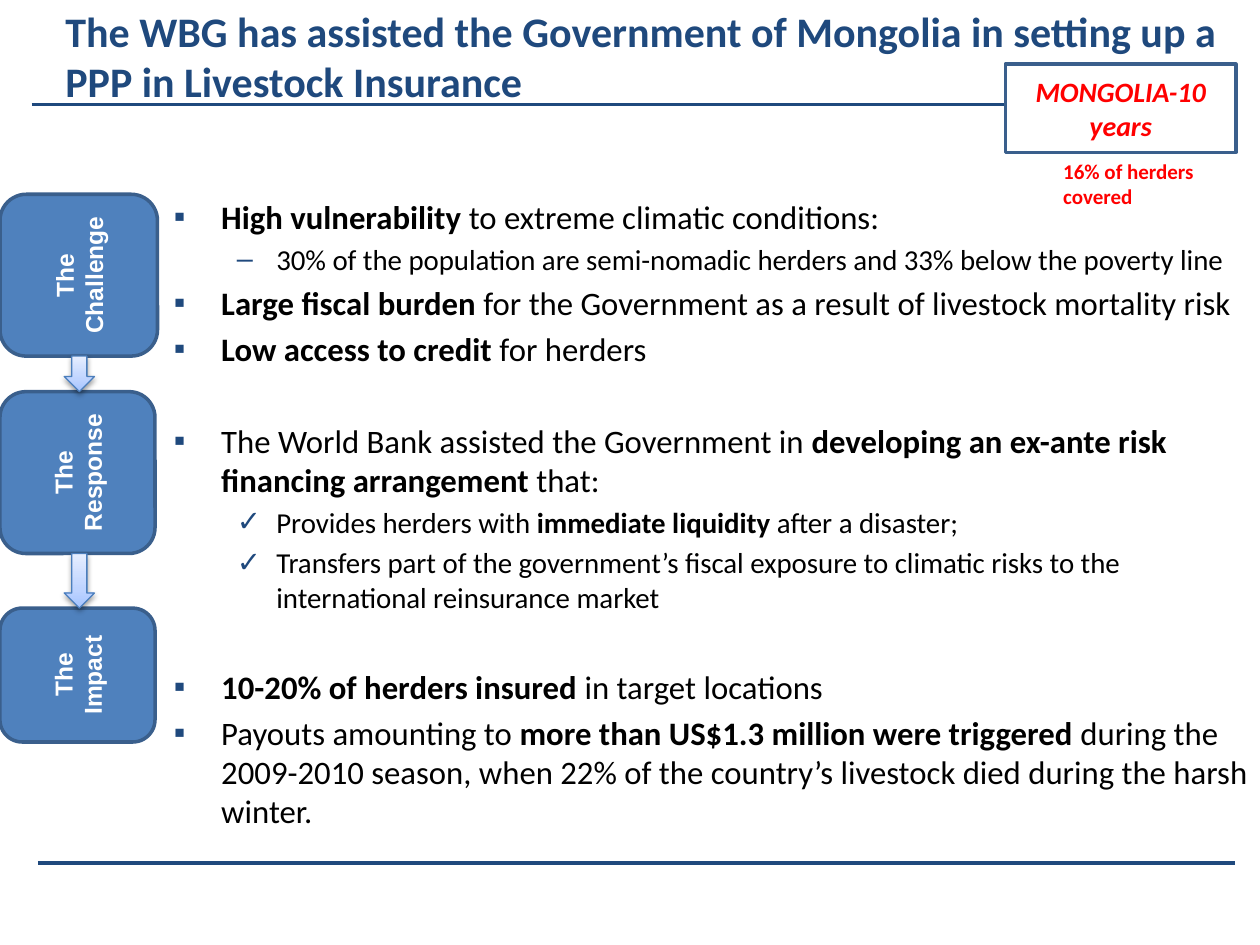
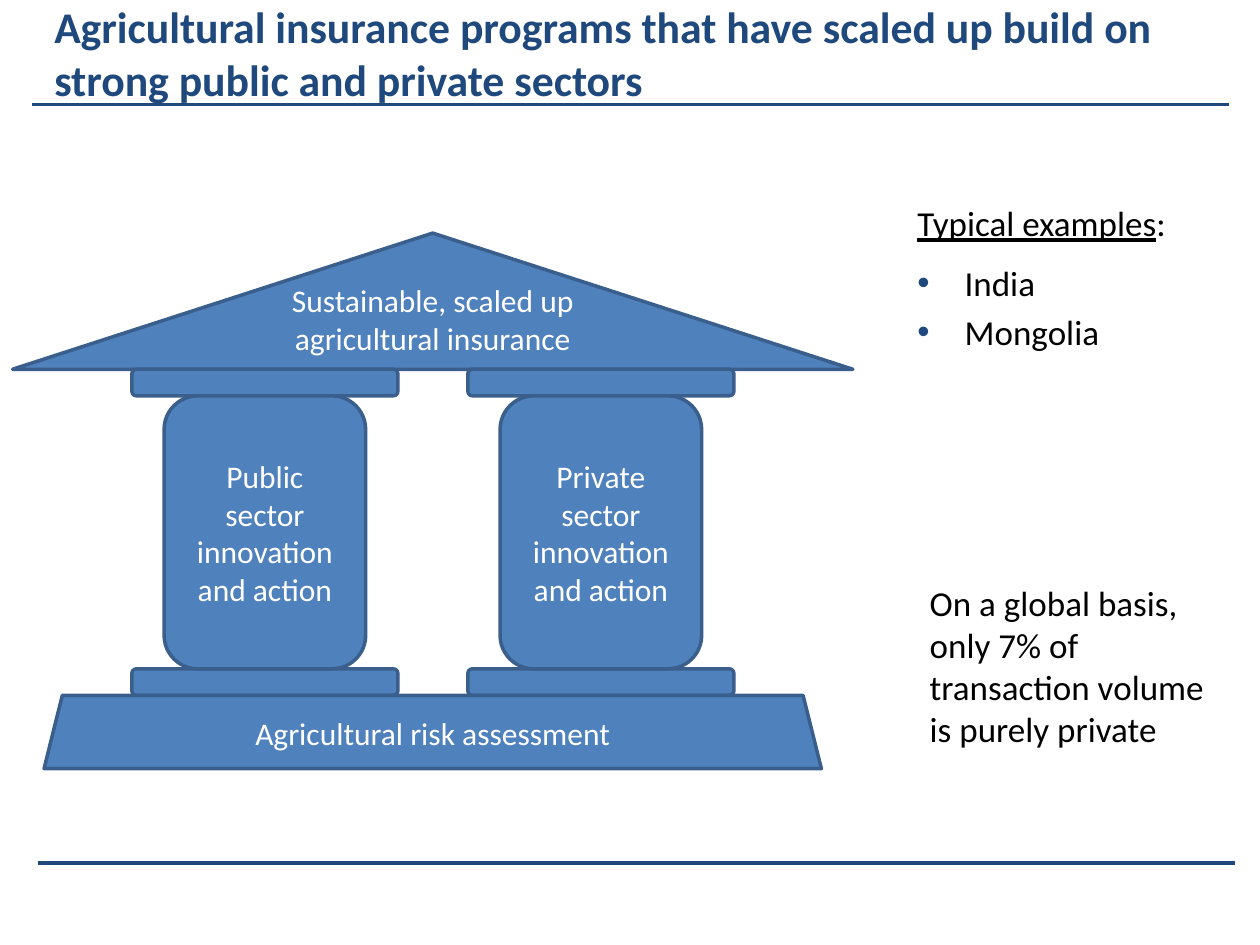
from copy import deepcopy
from dataclasses import dataclass
from typing import NamedTuple

from lxml import etree
from pptx import Presentation
from pptx.dml.color import RGBColor
from pptx.enum.shapes import MSO_CONNECTOR, MSO_SHAPE
from pptx.enum.text import MSO_ANCHOR, MSO_AUTO_SIZE, PP_ALIGN
from pptx.oxml.ns import qn
from pptx.util import Pt

NAVY = RGBColor(0x1F, 0x49, 0x7D)
BLUE = RGBColor(0x4F, 0x81, 0xBD)
OUTLINE = RGBColor(0x3A, 0x5F, 0x8C)
ARROW_LINE = RGBColor(0x4B, 0x7E, 0xBC)
ARROW_STOPS = (
    (0, RGBColor(0xA4, 0xC4, 0xFF)),
    (0.35, RGBColor(0xBF, 0xD4, 0xFF)),
    (1, RGBColor(0xE6, 0xEE, 0xFF)),
)
RED = RGBColor(0xFF, 0, 0)
WHITE = RGBColor(0xFF, 0xFF, 0xFF)
BLACK = RGBColor(0, 0, 0)

STRAIGHT = MSO_CONNECTOR.STRAIGHT
RECT, ROUND = MSO_SHAPE.RECTANGLE, MSO_SHAPE.ROUNDED_RECTANGLE
TRIANGLE, TRAPEZOID = MSO_SHAPE.ISOSCELES_TRIANGLE, MSO_SHAPE.TRAPEZOID
DOWN_ARROW = MSO_SHAPE.DOWN_ARROW
TOP, MIDDLE, BOTTOM = MSO_ANCHOR.TOP, MSO_ANCHOR.MIDDLE, MSO_ANCHOR.BOTTOM
LEFT, CENTER = PP_ALIGN.LEFT, PP_ALIGN.CENTER
NO_FIT = MSO_AUTO_SIZE.NONE

TITLE_AND_CONTENT = 1
SECTION_GAP = 30


class Box(NamedTuple):
    x: float
    y: float
    w: float
    h: float


class Run(NamedTuple):
    text: str
    bold: bool = False
    underline: bool = False


@dataclass(frozen=True)
class Font:
    size: float
    color: RGBColor = BLACK
    bold: bool = False
    italic: bool = False
    name: str = "Calibri"


@dataclass(frozen=True)
class Item:
    runs: tuple[Run, ...]
    size: float
    bullet: str = ""
    level: int = 0
    before: float | None = None  # default is a fifth of the text size
    after: float = 0


TAB_FONT = Font(14, WHITE, bold=True, name="Arial")
TEMPLE_FONT = Font(18, WHITE)


def style_run(r, font: Font) -> None:
    r.font.name, r.font.size = font.name, Pt(font.size)
    r.font.bold, r.font.italic = font.bold, font.italic
    r.font.color.rgb = font.color


def place(sp, box: Box) -> None:
    sp.left, sp.top, sp.width, sp.height = (Pt(v) for v in box)


def write(sp, text: str, font: Font, align=CENTER, anchor=MIDDLE) -> None:
    tf = sp.text_frame
    tf.text, tf.word_wrap, tf.auto_size = text, True, NO_FIT
    tf.vertical_anchor = anchor
    p = tf.paragraphs[0]
    p.alignment = align
    style_run(p.runs[0], font)


def add_box(slide, kind, box: Box, text: str = "", font: Font = TEMPLE_FONT,
            fill: RGBColor = BLUE, line: RGBColor = OUTLINE, weight: float = 2):
    sp = slide.shapes.add_shape(kind, *(Pt(v) for v in box))
    sp.shadow.inherit = False
    sp.fill.solid()
    sp.fill.fore_color.rgb = fill
    sp.line.color.rgb, sp.line.width = line, Pt(weight)
    if text:
        write(sp, text, font)
    return sp


def add_note(slide, box: Box, text: str, font: Font) -> None:
    sp = slide.shapes.add_textbox(*(Pt(v) for v in box))
    write(sp, text, font, LEFT, TOP)


def add_rule(slide, x: float, y: float) -> None:
    line = slide.shapes.add_connector(STRAIGHT, Pt(x), Pt(y), Pt(x + 684), Pt(y))
    line.line.color.rgb, line.line.width = NAVY, Pt(2)
    etree.SubElement(line._element.spPr, qn("a:effectLst"))


def add_arrow(slide, box: Box) -> None:
    sp = add_box(slide, DOWN_ARROW, box, line=ARROW_LINE, weight=0.75)
    # Three-stop gradient, darkest at the tip
    sp.fill.gradient()
    sp.fill.gradient_angle = 90
    spPr = sp._element.spPr
    stops = spPr.find(".//" + qn("a:gsLst"))
    stops.insert(1, deepcopy(stops[0]))
    for stop, (position, color) in zip(sp.fill.gradient_stops, ARROW_STOPS):
        stop.position, stop.color.rgb = position, color
    # Soft shadow below
    shadow = etree.SubElement(spPr.find(qn("a:effectLst")), qn("a:outerShdw"),
                              blurRad=str(Pt(3.1)), dist=str(Pt(1.6)), dir="5400000",
                              rotWithShape="0")
    black = etree.SubElement(shadow, qn("a:srgbClr"), val=str(BLACK))
    etree.SubElement(black, qn("a:alpha"), val="38000")


def set_bullet(p, item: Item) -> None:
    pPr = p._p.get_or_add_pPr()
    if not item.bullet:
        pPr.set("marL", "0")
        pPr.set("indent", "0")
        etree.SubElement(pPr, qn("a:buNone"))
        return
    margin, hanging = ((27, 27), (58.5, 22.5))[item.level]
    pPr.set("marL", str(Pt(margin)))
    pPr.set("indent", str(Pt(-hanging)))
    color = etree.SubElement(pPr, qn("a:buClr"))
    etree.SubElement(color, qn("a:srgbClr"), val=str(NAVY))
    etree.SubElement(pPr, qn("a:buFont"), typeface="Arial")
    etree.SubElement(pPr, qn("a:buChar"), char=item.bullet)


def fill_list(slide, box: Box, items: list[Item]) -> None:
    sp = slide.placeholders[1]
    place(sp, box)
    tf = sp.text_frame
    tf.auto_size = NO_FIT
    for i, item in enumerate(items):
        p = tf.add_paragraph() if i else tf.paragraphs[0]
        p.level = item.level
        set_bullet(p, item)
        before = item.size / 5 if item.before is None else item.before
        p.space_before = Pt(before if i else 0)
        p.space_after = Pt(item.after)
        for run in item.runs:
            r = p.add_run()
            r.text = run.text
            style_run(r, Font(item.size, bold=run.bold))
            r.font.underline = run.underline


def add_slide(prs, title: str, box: Box, size: float, anchor):
    slide = prs.slides.add_slide(prs.slide_layouts[TITLE_AND_CONTENT])
    add_rule(slide, 18, 59.8)
    add_rule(slide, 21.6, 493.2)
    place(slide.shapes.title, box)
    write(slide.shapes.title, title, Font(size, NAVY, bold=True), LEFT, anchor)
    return slide


def point(*runs: Run, before: float | None = None) -> Item:
    return Item(runs, 18.7, "▪", before=before)


def detail(bullet: str, *runs: Run) -> Item:
    return Item(runs, 16.5, bullet, level=1)


def build_mongolia(prs) -> None:
    slide = add_slide(
        prs, "The WBG has assisted the Government of Mongolia in setting up a "
        "PPP in Livestock Insurance", Box(30.2, -0.7, 689.8, 65.5), 24, TOP)

    # Stages down the left side, joined by arrows
    stages = (
        ("The Challenge", Box(0, 111, 90, 92.5)),
        ("The Response", Box(0, 223.8, 88.6, 92.5)),
        ("The Impact", Box(0, 347.5, 88.6, 76.5)),
    )
    for text, box in stages:
        sp = add_box(slide, ROUND, box, text, TAB_FONT)
        sp.text_frame._txBody.bodyPr.set("vert", "vert270")
    for (_, upper), (_, lower) in zip(stages, stages[1:]):
        bottom = upper.y + upper.h
        add_arrow(slide, Box(36.7, bottom, 17.3, lower.y - bottom))

    # Findings for each stage
    fill_list(slide, Box(92.2, 108.7, 633.6, 344.2), [
        point(Run("High vulnerability ", True), Run("to extreme climatic conditions:")),
        detail("–", Run("30% of the population are semi-nomadic herders and 33% below "
                        "the poverty line")),
        point(Run("Large fiscal burden ", True),
              Run("for the Government as a result of livestock mortality risk")),
        point(Run("Low access to credit ", True), Run("for herders")),
        point(Run("The World Bank assisted the Government in "),
              Run("developing an ex-ante risk financing arrangement", True),
              Run(" that:"), before=SECTION_GAP),
        detail("✓", Run("Provides herders with "), Run("immediate liquidity ", True),
               Run("after a disaster;")),
        detail("✓", Run("Transfers part of the government’s fiscal exposure to climatic "
                        "risks to the international reinsurance market")),
        point(Run("10-20% of herders insured ", True), Run("in target locations"),
              before=SECTION_GAP),
        point(Run("Payouts amounting to "),
              Run("more than US$1.3 million were triggered ", True),
              Run("during the 2009-2010 season, when 22% of the country’s livestock "
                  "died during the harsh winter.")),
    ])

    # Country tag
    add_box(slide, RECT, Box(574.5, 36.7, 131.8, 50.4), "MONGOLIA-10 years",
            Font(16, RED, bold=True, italic=True), fill=WHITE)
    add_note(slide, Box(600.5, 87.1, 108, 36), "16% of herders covered",
             Font(12, RED, bold=True))


def build_temple(prs) -> None:
    slide = add_slide(
        prs, "Agricultural insurance programs that have scaled up build on "
        "strong public and private sectors", Box(23.8, 0, 671.8, 59.8), 25, MIDDLE)

    # Roof
    roof = add_box(slide, TRIANGLE, Box(7.2, 133.2, 480.2, 77.8),
                   "Sustainable, scaled up agricultural insurance")
    roof.text_frame.vertical_anchor = BOTTOM
    roof.text_frame.margin_top, roof.text_frame.margin_bottom = Pt(0), Pt(7)

    # Two pillars, each a shaft between two slabs
    slab_w, slab_h, shaft_w, shaft_h = 152, 15.2, 115.2, 156
    top = 211
    for i, sector in enumerate(("Public", "Private")):
        x = 75.4 + 192 * i
        for y in (top, top + slab_h + shaft_h):
            add_box(slide, ROUND, Box(x, y, slab_w, slab_h))
        add_box(slide, ROUND, Box(x + (slab_w - shaft_w) / 2, top + slab_h, shaft_w, shaft_h),
                f"{sector} sector innovation and action")

    # Foundation
    add_box(slide, TRAPEZOID, Box(25.2, top + 2 * slab_h + shaft_h, 444.2, 41.8),
            "Agricultural risk assessment")

    # Examples and remark on the right
    fill_list(slide, Box(517, 111.6, 184.3, 177.8), [
        Item((Run("Typical examples", underline=True), Run(":")), 20, after=6),
        *(Item((Run(country),), 20, "•") for country in ("India", "Mongolia")),
    ])
    add_note(slide, Box(524.2, 329, 184.3, 177.8),
             "On a global basis, only 7% of transaction volume is purely private", Font(20))


def main() -> None:
    prs = Presentation()
    prs.slide_width, prs.slide_height = Pt(720), Pt(540)
    build_mongolia(prs)
    build_temple(prs)
    prs.save("out.pptx")


if __name__ == "__main__":
    main()
